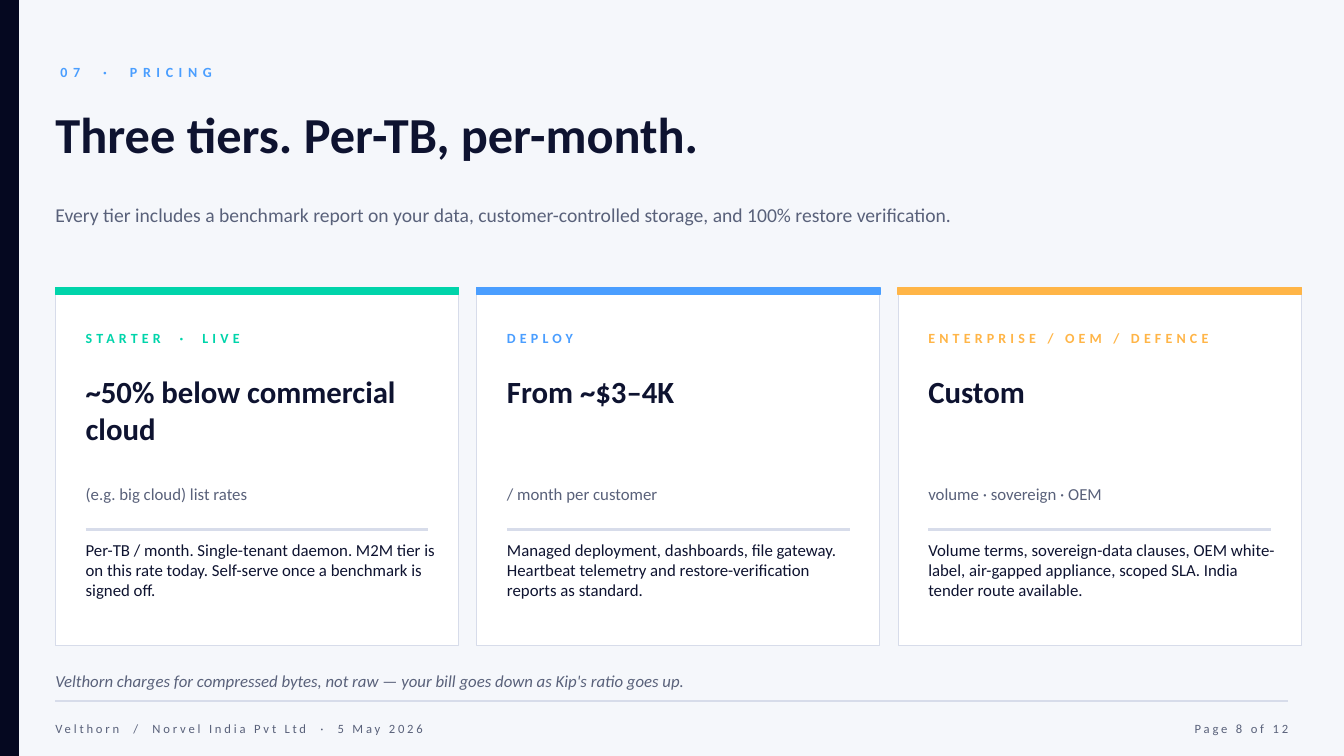
"""Build the pricing slide with three tier cards."""
from dataclasses import dataclass
from lxml.etree import SubElement
from pptx import Presentation
from pptx.dml.color import RGBColor
from pptx.enum.shapes import MSO_CONNECTOR, MSO_SHAPE
from pptx.enum.text import MSO_ANCHOR, MSO_AUTO_SIZE, PP_ALIGN
from pptx.oxml.ns import qn
from pptx.util import Pt

KICKER = "07  ·  PRICING"
TITLE = "Three tiers. Per-TB, per-month."
LEAD = ("Every tier includes a benchmark report on your data, "
        "customer-controlled storage, and 100% restore verification.")
TIERS = [
    ("00D4AA", "STARTER  ·  LIVE", "~50% below commercial cloud",
     "(e.g. big cloud) list rates",
     "Per-TB / month. Single-tenant daemon. M2M tier is on this rate today. "
     "Self-serve once a benchmark is signed off."),
    ("4A9EFF", "DEPLOY", "From ~$3–4K", "/ month per customer",
     "Managed deployment, dashboards, file gateway. Heartbeat telemetry and "
     "restore-verification reports as standard."),
    ("FFB547", "ENTERPRISE / OEM / DEFENCE", "Custom",
     "volume · sovereign · OEM",
     "Volume terms, sovereign-data clauses, OEM white-label, air-gapped "
     "appliance, scoped SLA. India tender route available."),
]
NOTE = ("Velthorn charges for compressed bytes, not raw — "
        "your bill goes down as Kip's ratio goes up.")
OWNER = "Velthorn  /  Norvel India Pvt Ltd  ·  5 May 2026"
PAGE = "Page 8 of 12"


@dataclass(frozen=True)
class Theme:
    """Colours and type sizes."""
    font: str = "Calibri"
    back: str = "F5F7FB"
    edge: str = "050820"
    ink: str = "0E1330"
    grey: str = "59617A"
    rule: str = "D7DCEA"
    card: str = "FFFFFF"
    blue: str = "4A9EFF"
    head: int = 36
    price: int = 22
    lead: int = 14
    body: int = 12
    label: int = 10
    foot: int = 9


LOOK = Theme()
WIDE, HIGH = 960, 540
LEFT, SPAN = 39.6, 878.4
CARD_W, CARD_H, CARD_Y = 288, 255.6, 205.2
STEP, PAD = 300.96, 21.6

deck = Presentation()
deck.slide_width, deck.slide_height = Pt(WIDE), Pt(HIGH)
slide = deck.slides.add_slide(deck.slide_layouts[5])
slide.background.fill.solid()
slide.background.fill.fore_color.rgb = RGBColor.from_string(LOOK.back)


def write(text, x, y, w, h, size=LOOK.body, color=LOOK.ink, bold=False,
          italic=False, gap=0, mid=True, align=PP_ALIGN.LEFT, box=None):
    """Put formatted text in a new text box or in the given one."""
    if box is None:
        box = slide.shapes.add_textbox(Pt(x), Pt(y), Pt(w), Pt(h))
    box.left, box.top, box.width, box.height = Pt(x), Pt(y), Pt(w), Pt(h)
    frame = box.text_frame
    frame.word_wrap, frame.auto_size = True, MSO_AUTO_SIZE.NONE
    frame.margin_left = frame.margin_right = 0
    frame.margin_top = frame.margin_bottom = 0
    frame.vertical_anchor = MSO_ANCHOR.MIDDLE if mid else MSO_ANCHOR.TOP
    para = frame.paragraphs[0]
    para.alignment = align
    run = para.add_run()
    run.text = text
    font = run.font
    font.name, font.size = LOOK.font, Pt(size)
    font.bold, font.italic = bold, italic
    font.color.rgb = RGBColor.from_string(color)
    if gap:
        run._r.get_or_add_rPr().set("spc", str(gap * 100))


def block(x, y, w, h, fill, line, weight=1):
    """Draw a filled rectangle."""
    rect = slide.shapes.add_shape(
        MSO_SHAPE.RECTANGLE, Pt(x), Pt(y), Pt(w), Pt(h))
    rect.shadow.inherit = False
    rect.fill.solid()
    rect.fill.fore_color.rgb = RGBColor.from_string(fill)
    rect.line.color.rgb = RGBColor.from_string(line)
    rect.line.width = Pt(weight)


def rule(x, y, w):
    """Draw a level divider."""
    line = slide.shapes.add_connector(
        MSO_CONNECTOR.STRAIGHT, Pt(x), Pt(y), Pt(x + w), Pt(y))
    line.line.color.rgb = RGBColor.from_string(LOOK.rule)
    line.line.width = Pt(1.75)
    SubElement(line._element.spPr, qn("a:effectLst"))


def tier(x, color, name, price, unit, text):
    """Draw one tier card."""
    block(x, CARD_Y, CARD_W, CARD_H, LOOK.card, LOOK.rule, 0.75)
    block(x, CARD_Y, CARD_W, 5.04, color, color)
    left, wide = x + PAD, 252
    write(name, left, 226.8, wide, 28.8, size=LOOK.label, color=color,
          bold=True, gap=3)
    write(price, left, 266.4, wide, 72, size=LOOK.price, bold=True, mid=False)
    write(unit, left, 345.6, wide, 28.8, color=LOOK.grey, mid=False)
    rule(left, 378.36, CARD_W - 2 * PAD)
    write(text, left, 385.2, wide, 61.2, mid=False)


def main():
    """Compose the slide and save it."""
    block(0, 0, 12.96, HIGH, LOOK.edge, LOOK.edge)
    write(KICKER, 43.2, LEFT, 576, 23.04, size=LOOK.label, color=LOOK.blue,
          bold=True, gap=4)
    write(TITLE, LEFT, 64.8, SPAN, 61.2, size=LOOK.head, bold=True,
          box=slide.shapes.title)
    write(LEAD, LEFT, 133.2, SPAN, 39.6, size=LOOK.lead, color=LOOK.grey)
    for index, item in enumerate(TIERS):
        tier(LEFT + index * STEP, *item)
    write(NOTE, LEFT, 471.6, SPAN, 28.8, color=LOOK.grey, italic=True)
    rule(LEFT, 500.76, 880.56)
    foot = {"size": LOOK.foot, "color": LOOK.grey, "gap": 2}
    write(OWNER, LEFT, 509.76, 576, 21.6, **foot)
    write(PAGE, 740.16, 509.76, 180, 21.6, align=PP_ALIGN.RIGHT, **foot)
    deck.save("out.pptx")


if __name__ == "__main__":
    main()
